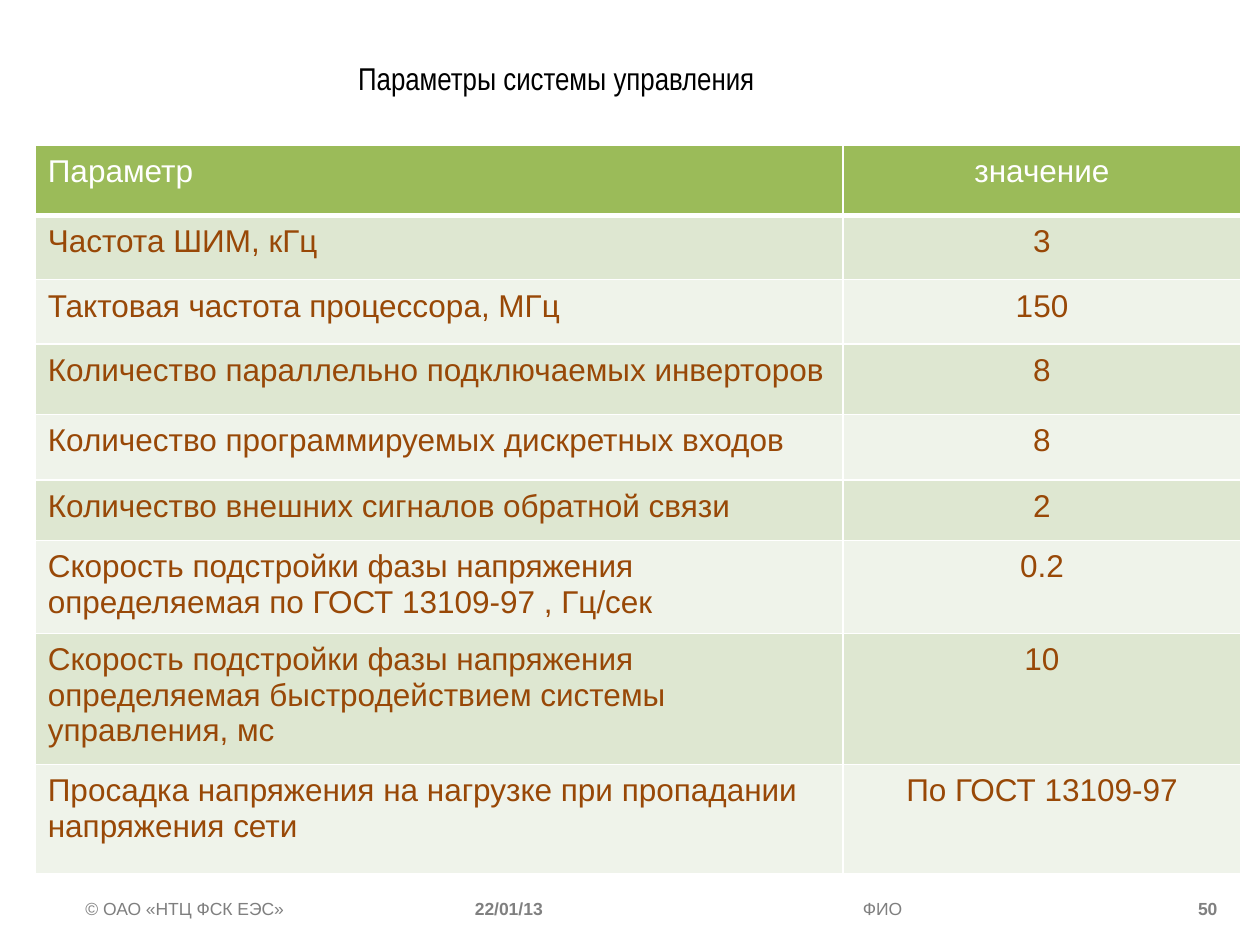
from dataclasses import dataclass

from lxml import etree
from pptx import Presentation
from pptx.dml.color import RGBColor
from pptx.enum.text import MSO_ANCHOR, MSO_AUTO_SIZE, PP_ALIGN
from pptx.oxml.ns import qn
from pptx.util import Pt

LEFT, CENTER, RIGHT = PP_ALIGN.LEFT, PP_ALIGN.CENTER, PP_ALIGN.RIGHT
TOP = MSO_ANCHOR.TOP
FIXED = MSO_AUTO_SIZE.NONE
PX = 9144  # 100 px to the inch


@dataclass(frozen=True)
class Theme:
    font: str = "Arial"
    narrow: str = "Arial Narrow"
    big: int = 18
    small: int = 10
    black: str = "000000"
    white: str = "FFFFFF"
    brown: str = "984807"
    green: str = "9BBB59"
    bands: tuple = ("DEE7D1", "EFF3EA")
    grey: str = "7F7F7F"
    mid: str = "808080"


class Deck:
    """Holds the theme and the current slide."""

    def __init__(self, theme):
        self.theme = theme
        self.prs = Presentation()
        self.prs.slide_width, self.prs.slide_height = 1000 * PX, 750 * PX
        self.slide = self.prs.slides.add_slide(self.prs.slide_layouts[5])

    def label(self, frame, text, color, size, name=None, align=LEFT, bold=False):
        para = frame.paragraphs[0]
        para.alignment = align
        run = para.add_run()
        run.text = text
        style = {"name": name or self.theme.font, "size": Pt(size), "bold": bold}
        for key, value in style.items():
            setattr(run.font, key, value)
        run.font.color.rgb = RGBColor.from_string(color)
        return para

    def title(self, text, *box):
        shape = self.slide.shapes.title
        for key, value in zip(("left", "top", "width", "height"), box):
            setattr(shape, key, value * PX)
        frame = shape.text_frame
        for key, value in {"word_wrap": True, "auto_size": FIXED, "vertical_anchor": TOP}.items():
            setattr(frame, key, value)
        look = self.theme
        self.label(frame, text, look.black, look.big, look.narrow, CENTER)

    def foot(self, text, left, width, color, align=LEFT, bold=False):
        shape = self.slide.shapes.add_textbox(left * PX, 708 * PX, width * PX, 42 * PX)
        shape.text_frame.word_wrap = True
        para = self.label(shape.text_frame, text, color, self.theme.small, align=align, bold=bold)
        props = para._p.get_or_add_pPr()
        props.set("marL", str(38 * PX))
        props.set("indent", str(-38 * PX))

    def edge(self, cell, widths):
        """Draw white cell borders; widths in points go by side."""
        props = cell._tc.get_or_add_tcPr()
        for spot, (side, width) in enumerate(widths.items()):
            line = etree.Element(qn("a:ln" + side), w=str(Pt(width)))
            fill = etree.SubElement(line, qn("a:solidFill"))
            etree.SubElement(fill, qn("a:srgbClr"), val=self.theme.white)
            props.insert(spot, line)

    def table(self, rows, left, top, widths, heights):
        look = self.theme
        grid = self.slide.shapes.add_table(
            len(rows), len(widths), left * PX, top * PX, sum(widths) * PX, sum(heights) * PX
        ).table
        grid.horz_banding = False
        for col, width in zip(grid.columns, widths):
            col.width = width * PX
        for i, (row, height) in enumerate(zip(rows, heights)):
            grid.rows[i].height = height * PX
            back = look.bands[(i - 1) % 2] if i else look.green
            ink = look.brown if i else look.white
            sides = {"L": 1, "R": 1, "T": 1 if i != 1 else 3, "B": 1 if i else 3}
            for j, text in enumerate(row):
                cell = grid.cell(i, j)
                cell.margin_top = cell.margin_bottom = 7 * PX
                cell.margin_left = cell.margin_right = 10 * PX
                cell.fill.solid()
                cell.fill.fore_color.rgb = RGBColor.from_string(back)
                self.edge(cell, sides)
                self.label(cell.text_frame, text, ink, look.big, align=CENTER if j else LEFT)


ROWS = [
    ("Параметр", "значение"),
    ("Частота ШИМ, кГц", "3"),
    ("Тактовая частота процессора, МГц", "150"),
    ("Количество параллельно подключаемых инверторов", "8"),
    ("Количество программируемых дискретных входов", "8"),
    ("Количество внешних сигналов обратной связи", "2"),
    ("Скорость подстройки фазы напряжения определяемая по ГОСТ 13109-97 , Гц/сек", "0.2"),
    ("Скорость подстройки фазы напряжения определяемая быстродействием системы управления, мс", "10"),
    ("Просадка напряжения на нагрузке при пропадании напряжения сети", "По ГОСТ 13109-97"),
]


def main():
    look = Theme()
    deck = Deck(look)
    deck.foot("ФИО", 675, 250, look.grey)
    deck.foot("50", 867, 109, look.mid, RIGHT, True)
    deck.foot("22/01/13", 367, 109, look.mid, bold=True)
    deck.foot("© ОАО «НТЦ ФСК ЕЭС»", 58, 250, look.grey)
    deck.title("Параметры системы управления", 0, 42, 883, 84)
    deck.table(ROWS, 28, 115, (641, 316), (56, 51, 51, 56, 52, 48, 71, 72, 87))
    deck.prs.save("out.pptx")


if __name__ == "__main__":
    main()
